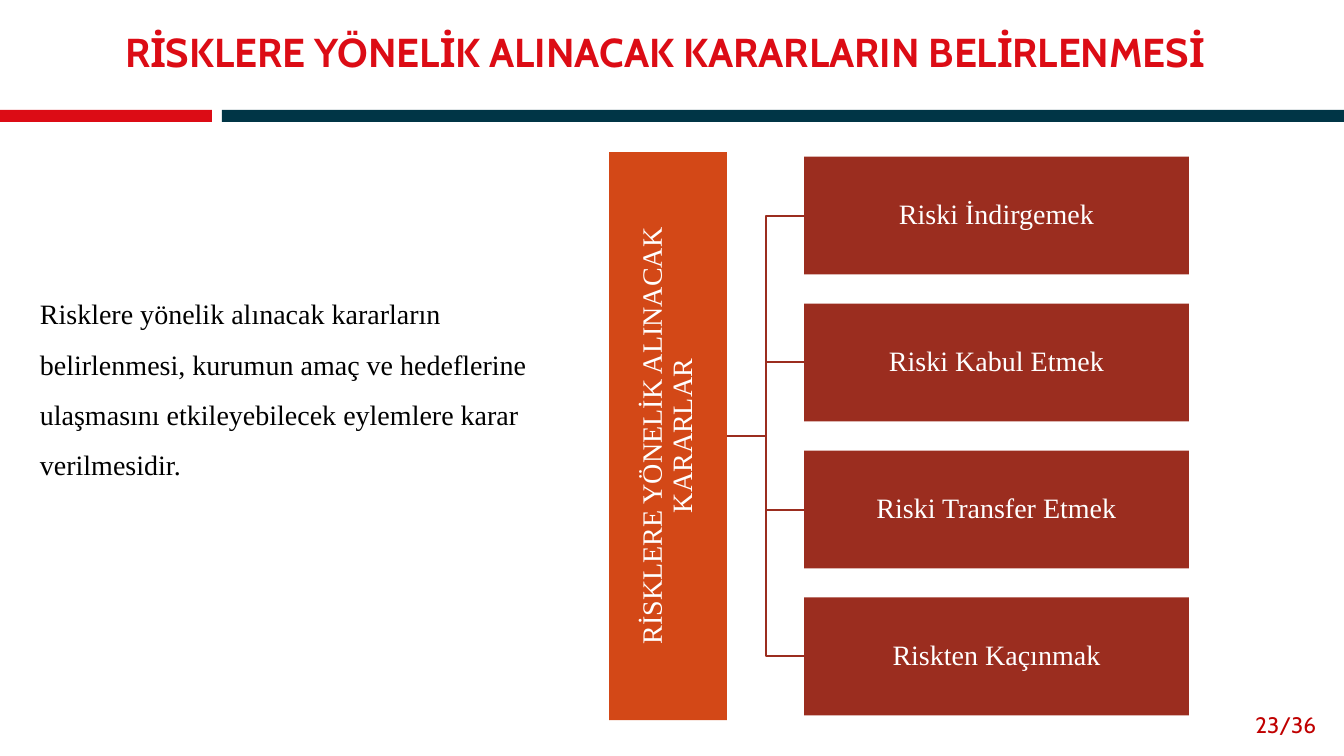
from pptx import Presentation
from pptx import util as u
from pptx.dml.color import RGBColor
from pptx.enum import shapes, text

SCALE = 12192000 / 1344
RED, NAVY, ORANGE, BRICK = "DC0C15", "003546", "D34817", "9B2D1F"
SERIF, SANS = "Times New Roman", "Cabin"
DECISIONS = ["Riski İndirgemek", "Riski Kabul Etmek", "Riski Transfer Etmek", "Riskten Kaçınmak"]


def px(length):
    return u.Emu(round(length * SCALE))


def colour(value):
    return RGBColor.from_string(value)


def write(shape, words, font, size, ink, align=text.PP_ALIGN.LEFT,
          anchor=text.MSO_ANCHOR.MIDDLE, spacing=1.0, bold=False, inset=None):
    frame = shape.text_frame
    frame.text = words
    frame.word_wrap = True
    frame.auto_size = text.MSO_AUTO_SIZE.NONE
    frame.vertical_anchor = anchor
    if inset is not None:
        frame.margin_left = frame.margin_right = px(inset)
        frame.margin_top = frame.margin_bottom = px(inset)
    para = frame.paragraphs[0]
    para.alignment = align
    para.line_spacing = spacing
    para.font.name = font
    para.font.size = u.Pt(size)
    para.font.bold = bold
    para.font.color.rgb = colour(ink)


def add_block(page, box, fill, words=None):
    block = page.shapes.add_shape(shapes.MSO_SHAPE.RECTANGLE, *map(px, box))
    block.shadow.inherit = False
    block.fill.solid()
    block.fill.fore_color.rgb = colour(fill)
    block.line.fill.background()
    if words:
        write(block, words, SERIF, 20, "FFFFFF", text.PP_ALIGN.CENTER, spacing=0.9, inset=1)
    return block


def add_text(page, box, words, *style, **options):
    write(page.shapes.add_textbox(*map(px, box)), words, *style, **options)


def add_header(page, box):
    left, top, width, height = box
    add_block(page, (left, top + 110, 212, 12), RED)
    add_block(page, (left + 222, top + 110, width - 222, 12), NAVY)
    title = page.shapes.title
    title.left, title.top, title.width, title.height = map(px, (left + 115, top + 14, 1210, 81))
    write(title, "RİSKLERE YÖNELİK ALINACAK KARARLARIN BELİRLENMESİ",
          SANS, 28.8, RED, spacing=0.9, bold=True)


def add_branch(page, start, end):
    middle = (start[0] + end[0]) / 2
    builder = page.shapes.build_freeform(*start, scale=SCALE)
    builder.add_line_segments([(middle, start[1]), (middle, end[1]), end], close=False)
    branch = builder.convert_to_shape()
    branch.shadow.inherit = False
    branch.fill.background()
    branch.line.color.rgb = colour(BRICK)
    branch.line.width = u.Pt(1)


def add_decision_tree(page, box):
    left, top, width, height = box
    thickness, child_left, child_width, pitch = 118, left + 195, width - 195, 147
    centre = top + height / 2
    child_centres = [centre + (index - (len(DECISIONS) - 1) / 2) * pitch
                     for index in range(len(DECISIONS))]
    for child_centre in reversed(child_centres):
        add_branch(page, (left + thickness, centre), (child_left, child_centre))
    root_box = (left + (thickness - height) / 2, centre - thickness / 2, height, thickness)
    root = add_block(page, root_box, ORANGE, "RİSKLERE YÖNELİK ALINACAK KARARLAR")
    root.rotation = 270
    for child_centre, words in zip(child_centres, DECISIONS):
        add_block(page, (child_left, child_centre - thickness / 2, child_width, thickness),
                  BRICK, words)


def main():
    deck = Presentation()
    deck.slide_width, deck.slide_height = px(1344), px(756)
    page = deck.slides.add_slide(deck.slide_layouts[5])
    add_header(page, (0, 0, 1344, 122))
    add_text(page, (30, 275, 547, 214),
             "Risklere yönelik alınacak kararların belirlenmesi, kurumun amaç ve hedeflerine "
             "ulaşmasını etkileyebilecek eylemlere karar verilmesidir.",
             SERIF, 20, "000000", anchor=text.MSO_ANCHOR.TOP, spacing=1.5)
    add_decision_tree(page, (609, 152, 580, 568))
    add_text(page, (1235, 705, 91, 40), "23/36", SANS, 16, "C00000", text.PP_ALIGN.RIGHT)
    deck.save("out.pptx")


if __name__ == "__main__":
    main()
